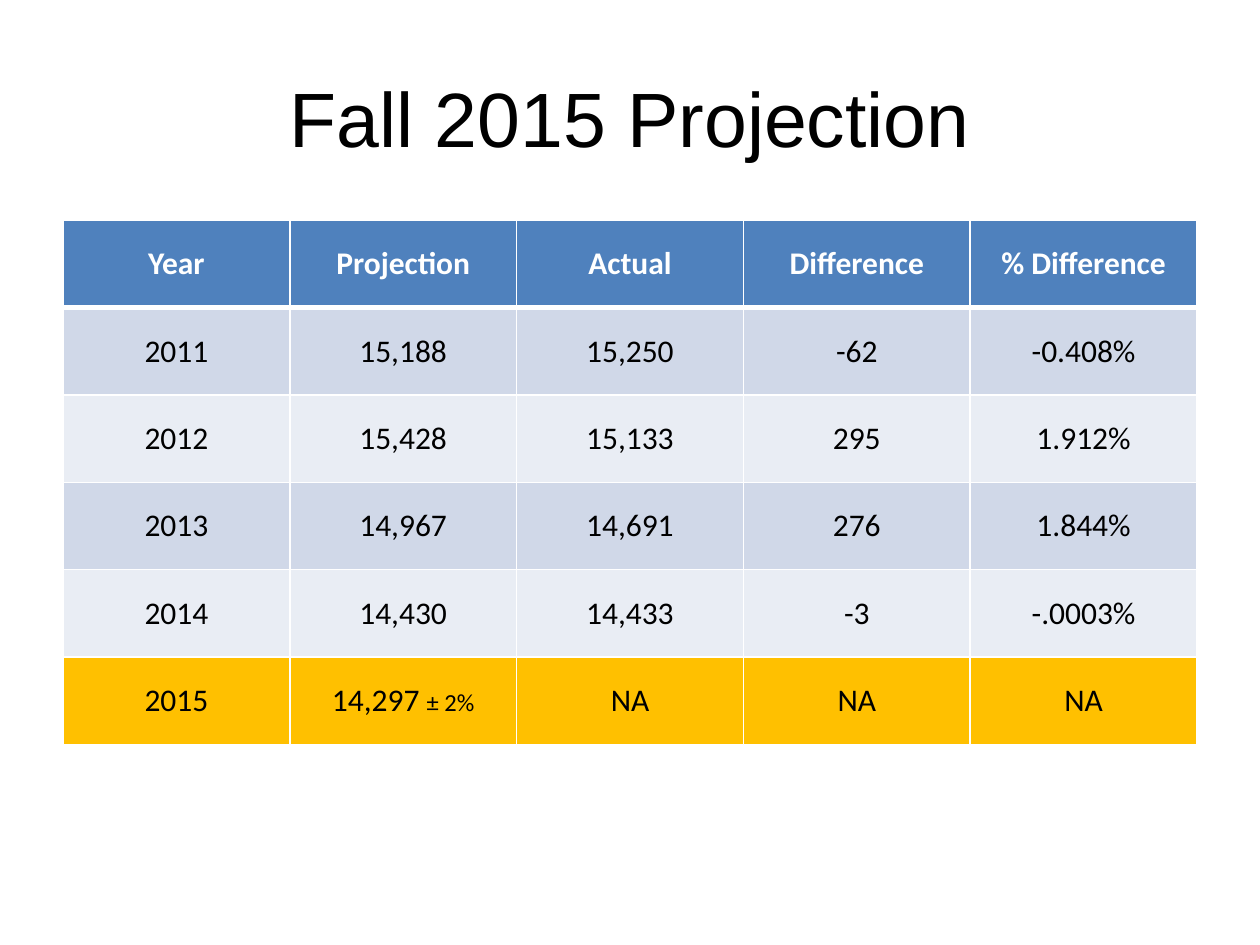
from dataclasses import dataclass

from lxml import etree
from pptx import Presentation
from pptx.dml.color import RGBColor
from pptx.enum import text
from pptx.oxml import ns
from pptx.util import Pt


@dataclass(frozen=True)
class Theme:
    title_font: str = "Arial"
    body_font: str = "Calibri"
    title_size: int = 44
    body_size: int = 18
    note_size: int = 14
    ink: str = "000000"
    paper: str = "FFFFFF"
    header: str = "4F81BD"
    bands: tuple = ("D0D8E8", "E9EDF4")
    highlight: str = "FFC000"
    rule: int = 1
    header_rule: int = 3


THEME = Theme()

ROWS = [
    ["Year", "Projection", "Actual", "Difference", "% Difference"],
    ["2011", "15,188", "15,250", "-62", "-0.408%"],
    ["2012", "15,428", "15,133", "295", "1.912%"],
    ["2013", "14,967", "14,691", "276", "1.844%"],
    ["2014", "14,430", "14,433", "-3", "-.0003%"],
    ["2015", "14,297 ", "NA", "NA", "NA"],
]
MARGIN_OF_ERROR = "± 2%"


def format_run(r, font, size, color, bold=False):
    r.font.name = font
    r.font.size = Pt(size)
    r.font.bold = bold
    r.font.color.rgb = RGBColor.from_string(color)


def set_borders(cell, top, bottom):
    tc_pr = cell._tc.get_or_add_tcPr()
    widths = {"lnL": THEME.rule, "lnR": THEME.rule, "lnT": top, "lnB": bottom}
    for i, (side, width) in enumerate(widths.items()):
        line = etree.Element(ns.qn(f"a:{side}"), w=str(Pt(width)))
        fill = etree.SubElement(line, ns.qn("a:solidFill"))
        etree.SubElement(fill, ns.qn("a:srgbClr"), val=THEME.paper)
        tc_pr.insert(i, line)


def add_title(s, box, title):
    sp = s.shapes.title
    sp.left, sp.top, sp.width, sp.height = map(Pt, box)
    tf = sp.text_frame
    tf.text = title
    tf.vertical_anchor = text.MSO_ANCHOR.MIDDLE
    p = tf.paragraphs[0]
    p.alignment = text.PP_ALIGN.CENTER
    format_run(p.runs[0], THEME.title_font, THEME.title_size, THEME.ink)


def row_fill(row, last):
    if row == 0:
        return THEME.header
    return THEME.highlight if row == last else THEME.bands[(row - 1) % 2]


def fill_cell(cell, value, row, last):
    cell.fill.solid()
    cell.fill.fore_color.rgb = RGBColor.from_string(row_fill(row, last))
    set_borders(
        cell,
        top=THEME.header_rule if row == 1 else THEME.rule,
        bottom=THEME.header_rule if row == 0 else THEME.rule,
    )
    cell.vertical_anchor = text.MSO_ANCHOR.MIDDLE
    p = cell.text_frame.paragraphs[0]
    p.text = value
    p.alignment = text.PP_ALIGN.CENTER
    color = THEME.paper if row == 0 else THEME.ink
    format_run(p.runs[0], THEME.body_font, THEME.body_size, color, row == 0)


def add_projection_table(s, box, rows):
    left, top, width, height = box
    n_rows, n_cols = len(rows), len(rows[0])
    table = s.shapes.add_table(
        n_rows, n_cols, Pt(left), Pt(top), Pt(width), Pt(height)
    ).table
    for column in table.columns:
        column.width = Pt(width / n_cols)
    for i, values in enumerate(rows):
        table.rows[i].height = Pt(height / n_rows)
        for j, value in enumerate(values):
            fill_cell(table.cell(i, j), value, i, n_rows - 1)
    r = table.cell(n_rows - 1, 1).text_frame.paragraphs[0].add_run()
    r.text = MARGIN_OF_ERROR
    format_run(r, THEME.body_font, THEME.note_size, THEME.ink)


def main():
    prs = Presentation()
    prs.slide_width, prs.slide_height = Pt(720), Pt(540)
    s = prs.slides.add_slide(prs.slide_layouts.get_by_name("Title Only"))
    add_title(s, (36, 21.6, 648, 90), "Fall 2015 Projection")
    add_projection_table(s, (36, 126, 648, 299.5), ROWS)
    prs.save("out.pptx")


if __name__ == "__main__":
    main()
